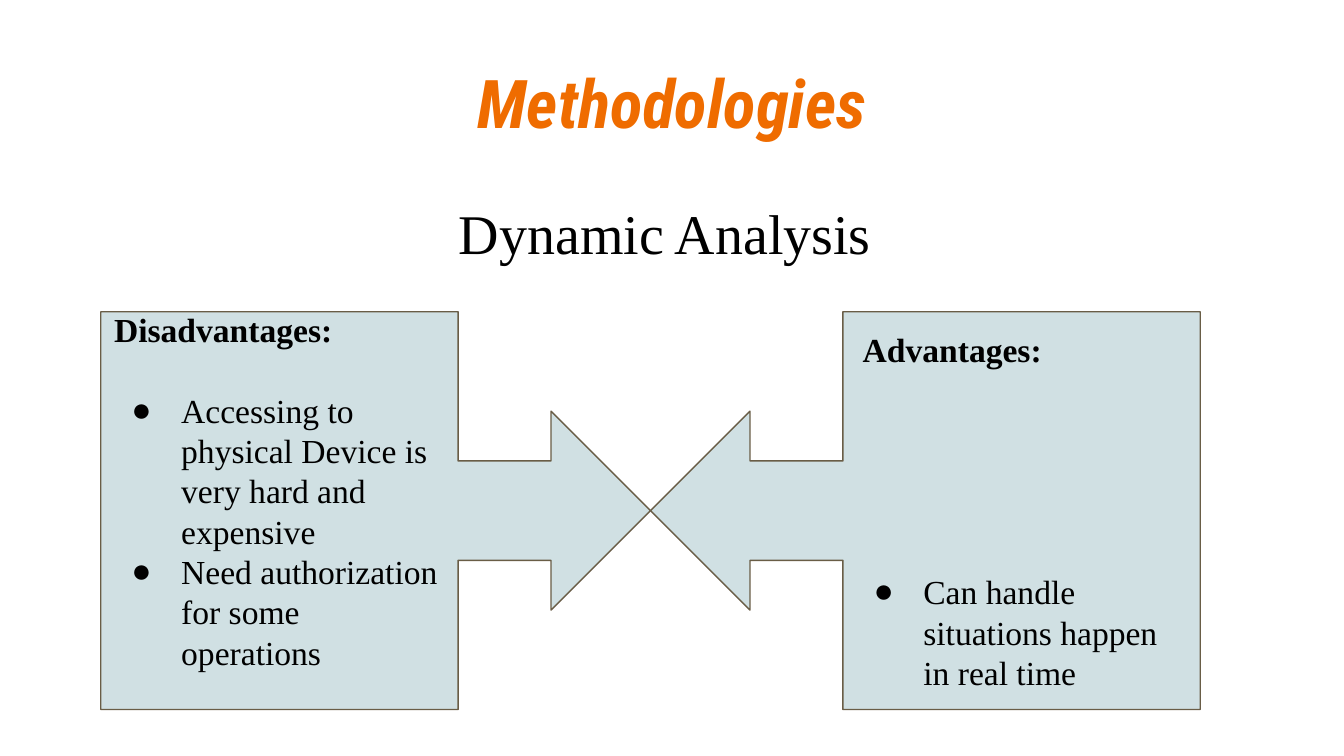
from pptx import Presentation, util as u
from pptx.dml.color import RGBColor
from pptx.enum import shapes, text
from lxml import etree

W = 10
H = W * 9 / 16
THEME = {
    "title": {"name": "Roboto Condensed", "size": u.Pt(36), "bold": True, "italic": True, "color": "EF6C00"},
    "topic": {"name": "Times New Roman", "size": u.Pt(30), "color": "000000"},
    "heading": {"name": "Times New Roman", "size": u.Pt(18), "bold": True, "color": "000000"},
    "item": {"name": "Times New Roman", "size": u.Pt(18), "bold": False, "color": "000000"},
    "fill": "D0E0E3",
    "line": "695D46",
}
LINE_PITCH = 21.6
INSET = 0.1
NS = "http://schemas.openxmlformats.org/drawingml/2006/main"


def set_attrs(obj, values):
    for name, value in values.items():
        setattr(obj, name, value)


def place(sp, box):
    set_attrs(sp, dict(zip(("left", "top", "width", "height"), map(u.Inches, box))))


def frame(sp, anchor, top=INSET, bottom=INSET):
    tf = sp.text_frame
    set_attrs(tf, {
        "word_wrap": True, "auto_size": text.MSO_AUTO_SIZE.NONE, "vertical_anchor": anchor,
        "margin_left": u.Inches(INSET), "margin_right": u.Inches(INSET),
        "margin_top": u.Inches(top), "margin_bottom": u.Inches(bottom),
    })
    return tf


def write(p, words, style, align):
    set_attrs(p, {"alignment": align, "space_before": u.Pt(0), "space_after": u.Pt(0)})
    r = p.add_run()
    r.text = words
    set_attrs(r.font, {k: v for k, v in THEME[style].items() if k != "color"})
    r.font.color.rgb = RGBColor.from_string(THEME[style]["color"])


def add_bullet(p):
    pPr = p._p.get_or_add_pPr()
    pPr.set("marL", str(u.Inches(0.5)))
    pPr.set("indent", str(u.Inches(-0.37)))
    color = etree.SubElement(pPr, f"{{{NS}}}buClr")
    etree.SubElement(color, f"{{{NS}}}srgbClr", val=THEME["item"]["color"])
    etree.SubElement(pPr, f"{{{NS}}}buSzPts", val="1800")
    etree.SubElement(pPr, f"{{{NS}}}buFont", typeface=THEME["item"]["name"])
    etree.SubElement(pPr, f"{{{NS}}}buChar", char="●")


def fill_banner(sp, box, words, style):
    place(sp, box)
    tf = frame(sp, text.MSO_ANCHOR.TOP)
    write(tf.paragraphs[0], words, style, text.PP_ALIGN.CENTER)


def add_callout(slide, kind, box, heading, items, gap_lines, top, bottom):
    """Arrow callout with a heading, a gap of some lines, then bullets."""
    sp = slide.shapes.add_shape(kind, *map(u.Inches, box))
    sp.shadow.inherit = False
    for i, value in enumerate((0.25, 0.25, 0.25, 0.65)):
        sp.adjustments[i] = value
    sp.fill.solid()
    sp.fill.fore_color.rgb = RGBColor.from_string(THEME["fill"])
    sp.line.color.rgb = RGBColor.from_string(THEME["line"])
    sp.line.width = u.Pt(0.75)

    tf = frame(sp, text.MSO_ANCHOR.MIDDLE, top, bottom)
    write(tf.paragraphs[0], heading, "heading", text.PP_ALIGN.LEFT)
    for i, item in enumerate(items):
        p = tf.add_paragraph()
        write(p, item, "item", text.PP_ALIGN.LEFT)
        if i == 0:
            p.space_before = u.Pt(gap_lines * LINE_PITCH)
        add_bullet(p)
    for p in tf.paragraphs:
        p.line_spacing = u.Pt(LINE_PITCH)


def build_comparison(slide, box):
    """Two callouts of equal width whose arrows meet in the middle of the box."""
    left, top, width, height = box
    half = width / 2
    add_callout(slide, shapes.MSO_SHAPE.RIGHT_ARROW_CALLOUT, (left, top, half, height),
                "Disadvantages:",
                ["Accessing to physical Device is very hard and expensive",
                 "Need authorization for some operations"],
                gap_lines=1, top=0, bottom=0.3)
    add_callout(slide, shapes.MSO_SHAPE.LEFT_ARROW_CALLOUT, (left + half, top, half, height),
                " Advantages:", ["Can handle situations happen in real time"],
                gap_lines=5, top=INSET, bottom=INSET)


def main():
    prs = Presentation()
    prs.slide_width, prs.slide_height = u.Inches(W), u.Inches(H)
    slide = prs.slides.add_slide(prs.slide_layouts[0])
    title, topic = slide.placeholders
    fill_banner(title, (0.34, 0.36, W - 2 * 0.34, 0.77), "Methodologies", "title")
    fill_banner(topic, (0.98, 1.38, W - 2 * 0.98, 0.94), "Dynamic Analysis ", "topic")
    build_comparison(slide, (0.75, 2.32, 8.18, 2.96))
    prs.save("out.pptx")


if __name__ == "__main__":
    main()
